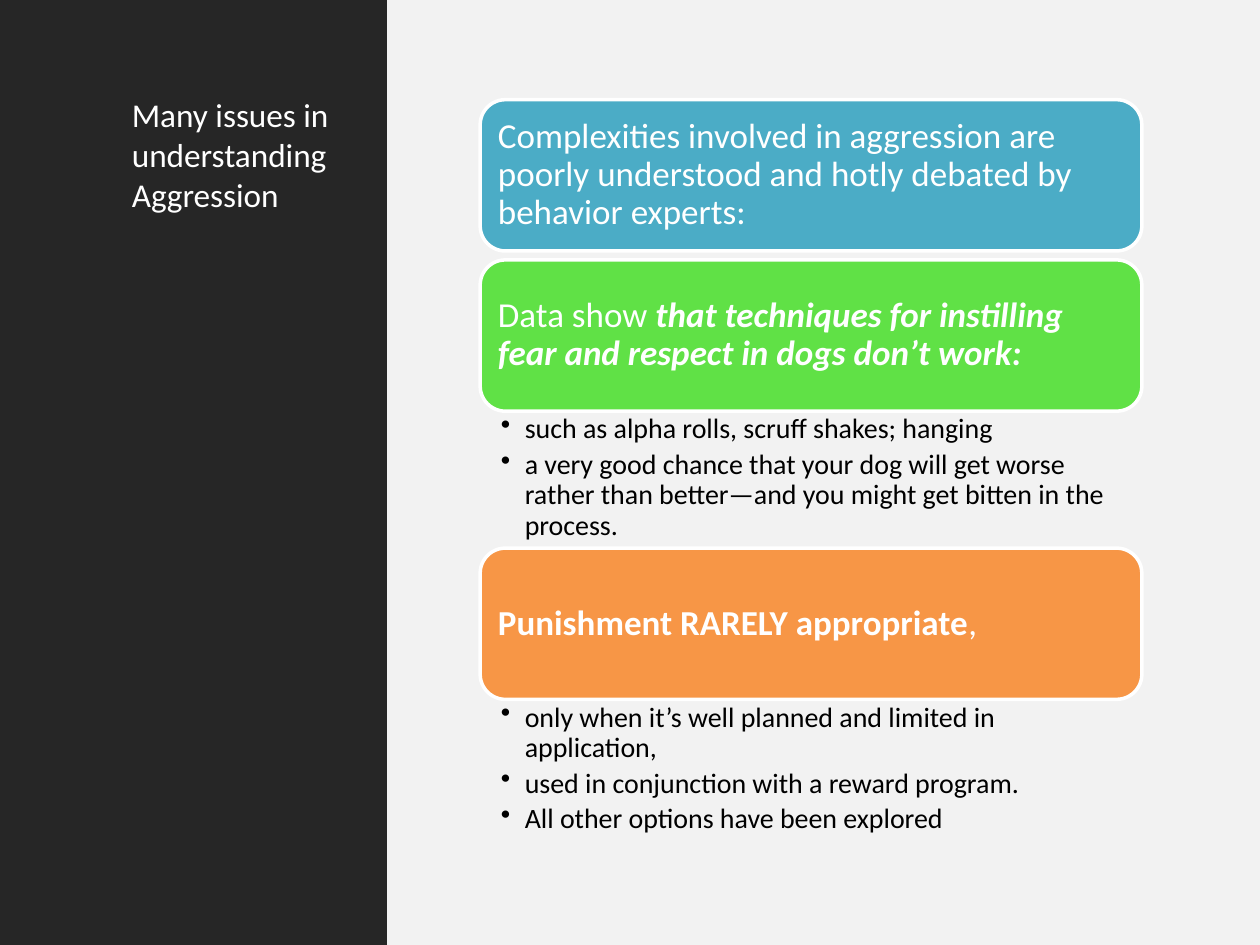
from dataclasses import dataclass

from lxml.etree import SubElement
from pptx import Presentation
from pptx.dml.color import RGBColor
from pptx.enum.shapes import MSO_SHAPE as Shape
from pptx.enum.text import MSO_ANCHOR as Anchor, PP_ALIGN as Align
from pptx.oxml.ns import qn
from pptx.util import Cm, Length, Pt

WHITE = RGBColor(0xFF, 0xFF, 0xFF)
BLACK = RGBColor(0x00, 0x00, 0x00)
CHARCOAL = RGBColor(0x26, 0x26, 0x26)
PALE_GREY = RGBColor(0xF2, 0xF2, 0xF2)
TEAL = RGBColor(0x4B, 0xAC, 0xC6)
GREEN = RGBColor(0x60, 0xE1, 0x46)
ORANGE = RGBColor(0xF7, 0x96, 0x46)

FONT = "Calibri"
SLIDE_WIDTH, SLIDE_HEIGHT = Cm(25.4), Cm(19.05)
SIDEBAR_WIDTH = Cm(7.8)
CARD_LEFT, CARD_WIDTH, CARD_HEIGHT = Cm(9.68), Cm(13.34), Cm(3.05)
FIRST_CARD_TOP = Cm(2.01)
BULLET_INDENT = Cm(0.48)


@dataclass(frozen=True)
class Phrase:
    text: str
    bold: bool = False
    italic: bool = False


@dataclass(frozen=True)
class Issue:
    color: RGBColor
    heading: tuple[Phrase, ...]
    space_below: Length  # holds the details, or is the gap to the next card
    details: tuple[str, ...] = ()


ISSUES = (
    Issue(
        TEAL,
        (Phrase("Complexities involved in aggression are poorly understood "
                "and hotly debated by behavior experts:"),),
        Cm(0.18),
    ),
    Issue(
        GREEN,
        (Phrase("Data show "),
         Phrase("that techniques for instilling fear and respect in dogs "
                "don’t work:", bold=True, italic=True)),
        Cm(2.76),
        ("such as alpha rolls, scruff shakes; hanging",
         "a very good chance that your dog will get worse rather than "
         "better—and you might get bitten in the process."),
    ),
    Issue(
        ORANGE,
        (Phrase("Punishment RARELY appropriate", bold=True), Phrase(",")),
        Cm(2.92),
        ("only when it’s well planned and limited in application,",
         "used in conjunction with a reward program.",
         "All other options have been explored"),
    ),
)


def style_font(font, size: float, color: RGBColor) -> None:
    font.name = FONT
    font.size = Pt(size)
    font.color.rgb = color


def set_margins(frame, left: Length, top: Length, right: Length) -> None:
    frame.margin_left, frame.margin_right = left, right
    frame.margin_top = frame.margin_bottom = top


def add_panel(slide, left: Length, width: Length, color: RGBColor) -> None:
    panel = slide.shapes.add_shape(Shape.RECTANGLE, left, 0, width, SLIDE_HEIGHT)
    panel.shadow.inherit = False
    panel.fill.solid()
    panel.fill.fore_color.rgb = color
    panel.line.fill.background()


def add_title(slide, text: str) -> None:
    title = slide.shapes.add_textbox(Cm(2.41), Cm(1.78), Cm(4.57), Cm(15.49))
    frame = title.text_frame
    frame.word_wrap = True
    frame.text = text
    style_font(frame.paragraphs[0].runs[0].font, 19, WHITE)


def add_card(slide, issue: Issue, top: Length) -> None:
    card = slide.shapes.add_shape(
        Shape.ROUNDED_RECTANGLE, CARD_LEFT, top, CARD_WIDTH, CARD_HEIGHT)
    card.shadow.inherit = False
    card.fill.solid()
    card.fill.fore_color.rgb = issue.color
    card.line.color.rgb = WHITE
    card.line.width = Pt(2)

    frame = card.text_frame
    frame.word_wrap = True
    frame.vertical_anchor = Anchor.MIDDLE
    set_margins(frame, Cm(0.21), Cm(0.21), Cm(0.21))
    heading = frame.paragraphs[0]
    heading.alignment = Align.LEFT
    heading.line_spacing = 0.9
    for phrase in issue.heading:
        run = heading.add_run()
        run.text = phrase.text
        style_font(run.font, 20, WHITE)
        run.font.bold = phrase.bold
        run.font.italic = phrase.italic


def add_details(slide, issue: Issue, top: Length) -> None:
    details = slide.shapes.add_textbox(
        CARD_LEFT, top, CARD_WIDTH, issue.space_below)
    frame = details.text_frame
    frame.word_wrap = True
    set_margins(frame, Cm(0.42), Cm(0.07), Cm(0.4))
    frame.text = "\n".join(issue.details)
    for paragraph in frame.paragraphs:
        properties = paragraph._p.get_or_add_pPr()
        properties.set("marL", str(BULLET_INDENT))
        properties.set("indent", str(-BULLET_INDENT))
        SubElement(properties, qn("a:buChar")).set("char", "•")
        paragraph.line_spacing = 0.9
        paragraph.space_after = Pt(3.2)
        style_font(paragraph.runs[0].font, 16, BLACK)


def main() -> None:
    deck = Presentation()
    deck.slide_width, deck.slide_height = SLIDE_WIDTH, SLIDE_HEIGHT
    slide = deck.slides.add_slide(deck.slide_layouts[6])

    # Background panels and title
    add_panel(slide, SIDEBAR_WIDTH, SLIDE_WIDTH - SIDEBAR_WIDTH, PALE_GREY)
    add_panel(slide, 0, SIDEBAR_WIDTH, CHARCOAL)
    add_title(slide, "Many issues in understanding Aggression")

    # Stack of issues, each card followed by its details
    top = FIRST_CARD_TOP
    for issue in ISSUES:
        add_card(slide, issue, top)
        top += CARD_HEIGHT
        if issue.details:
            add_details(slide, issue, top)
        top += issue.space_below

    deck.save("out.pptx")


if __name__ == "__main__":
    main()
